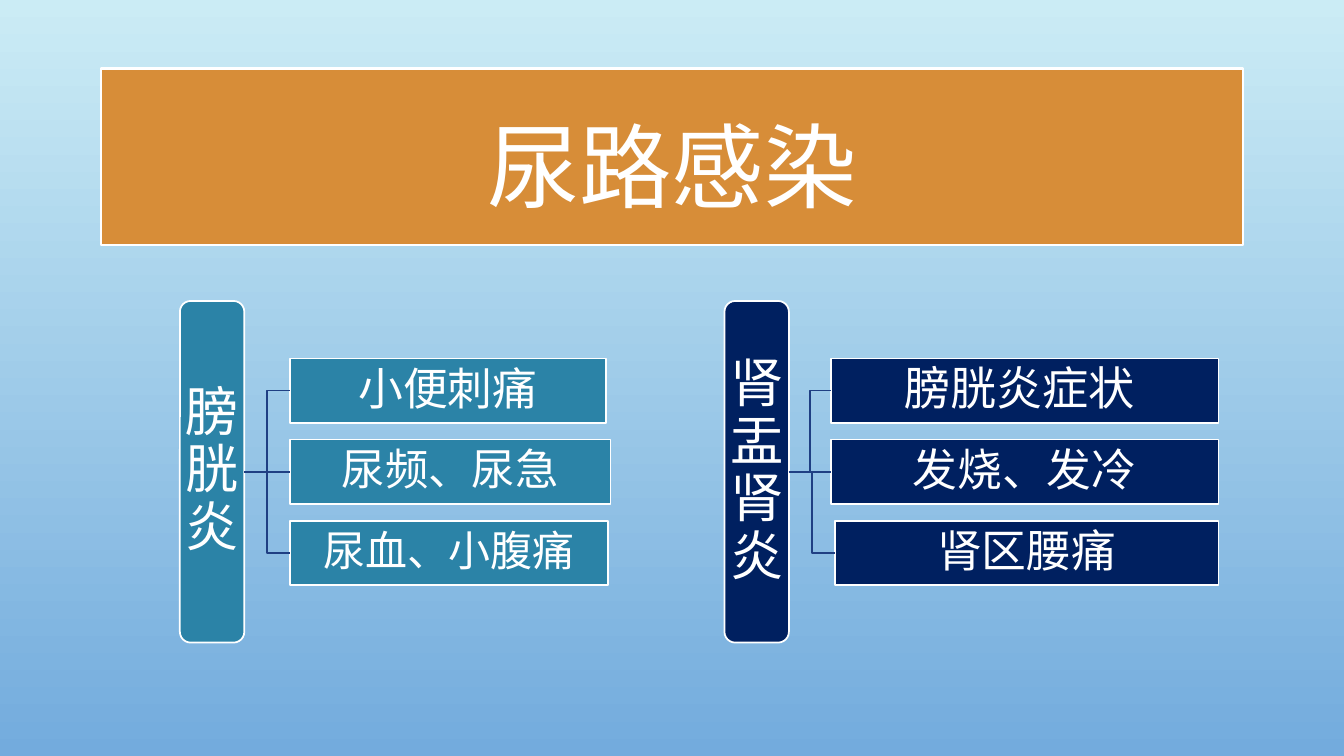
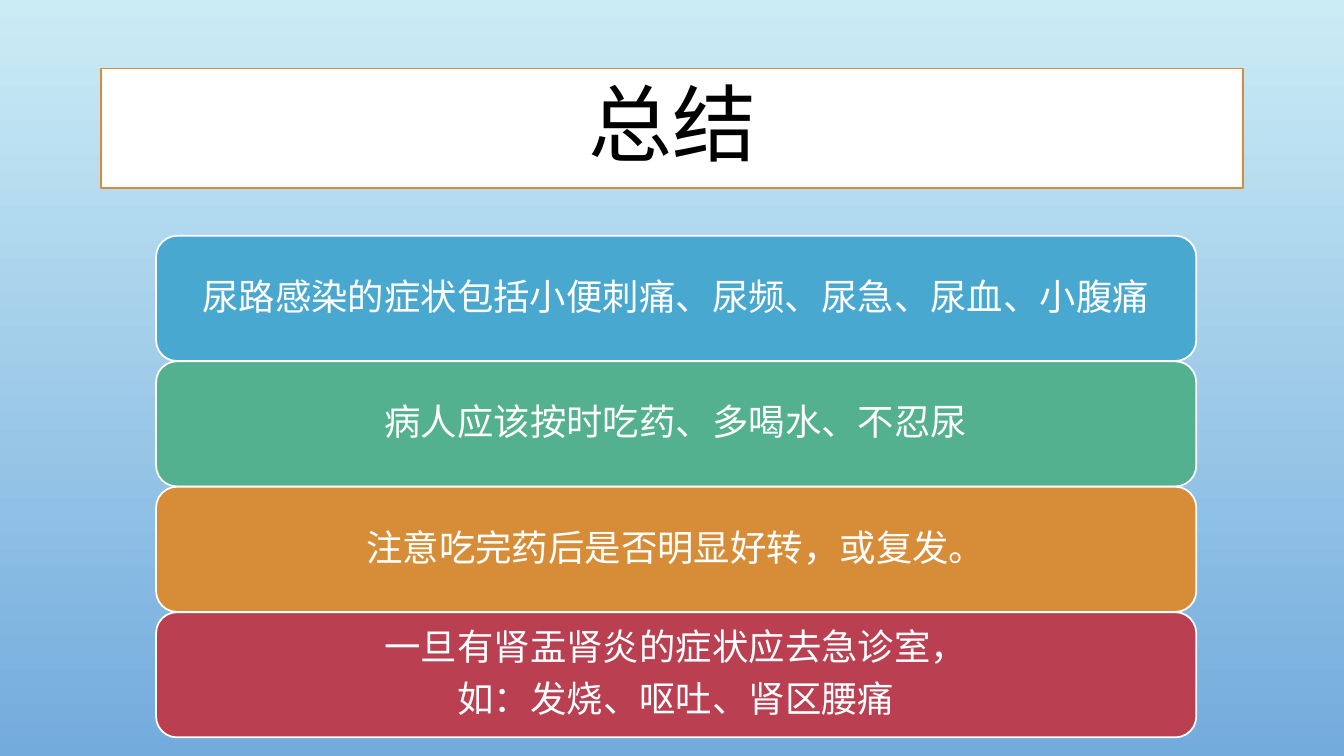
from dataclasses import dataclass

from lxml import etree
from pptx import Presentation
from pptx.dml.color import RGBColor
from pptx.enum import shapes as kinds, text as txt
from pptx.oxml.ns import qn
from pptx.util import Pt


# Colours, font and type sizes
@dataclass(frozen=True)
class Theme:
    sky: str = "CBECF5"
    blue: str = "73ABDD"
    white: str = "FFFFFF"
    black: str = "000000"
    orange: str = "D78D38"
    teal: str = "2B83A7"
    navy: str = "002060"
    wire: str = "1F3F83"
    azure: str = "48A8D0"
    green: str = "53B18F"
    red: str = "BA3F51"
    font: str = "Calibri"
    head: int = 66
    sub: int = 60
    stem: int = 38
    body: int = 26
    edge: float = 1.25


T = Theme()
RECT = kinds.MSO_SHAPE.RECTANGLE
ROUND = kinds.MSO_SHAPE.ROUNDED_RECTANGLE
MID = 337  # centre line of both trees


def rgb(code):
    return RGBColor.from_string(code)


def page(deck):
    """Blank slide with the shared gradient."""
    slide = deck.slides.add_slide(deck.slide_layouts[6])
    fill = slide.background.fill
    fill.gradient()
    fill.gradient_angle = 270
    for stop, code in zip(fill.gradient_stops, (T.sky, T.blue)):
        stop.color.rgb = rgb(code)
    return slide


def panel(slide, kind, area, fill, lines, size, ink=T.white, edge=T.white,
          width=T.edge, pad=2, drop=0):
    """Filled shape with centred text; drop lowers the text."""
    shape = slide.shapes.add_shape(kind, *map(Pt, area))
    shape.shadow.inherit = False
    shape.fill.solid()
    shape.fill.fore_color.rgb = rgb(fill)
    shape.line.color.rgb = rgb(edge)
    shape.line.width = Pt(width)
    frame = shape.text_frame
    frame.word_wrap = True
    frame.vertical_anchor = txt.MSO_ANCHOR.MIDDLE
    frame.margin_left = frame.margin_right = frame.margin_bottom = Pt(pad)
    frame.margin_top = Pt(pad + drop)
    for i, line in enumerate(lines):
        para = frame.paragraphs[0] if i == 0 else frame.add_paragraph()
        para.alignment = txt.PP_ALIGN.CENTER
        para.line_spacing = 0.9
        if i:
            para.space_before = Pt(0.35 * size)
        run = para.add_run()
        run.text = line
        run.font.name = T.font
        run.font.size = Pt(size)
        run.font.color.rgb = rgb(ink)
    return shape


def title(slide, words, size, high, **style):
    panel(slide, RECT, (72, 49, 816, high), lines=[words], size=size, **style)


def link(slide, stem, leaf, kind):
    """Line from the right of the stem to the left of the leaf."""
    line = slide.shapes.add_connector(kind, 0, 0, 0, 0)
    line.begin_connect(stem, 3)
    line.end_connect(leaf, 1)
    line.line.color.rgb = rgb(T.wire)
    line.line.width = Pt(T.edge)
    etree.SubElement(line._element.spPr, qn("a:effectLst"))


def tree(slide, left, name, fill, leaves):
    """Upright stem joined to a column of leaves."""
    wide, tall, step = 46, 244, 58
    stem = panel(slide, ROUND, (left, MID - tall / 2, wide, tall), fill,
                 [name], T.stem)
    for i, (words, size, x, span) in enumerate(leaves):
        row = i - (len(leaves) - 1) / 2
        area = (x, MID + row * step - wide / 2, span, wide)
        leaf = panel(slide, RECT, area, fill, [words], size)
        bend = kinds.MSO_CONNECTOR.ELBOW if row else kinds.MSO_CONNECTOR.STRAIGHT
        link(slide, stem, leaf, bend)


def bars(slide, rows):
    """Full-width bars stacked edge to edge."""
    for i, (fill, *lines) in enumerate(rows):
        panel(slide, ROUND, (111.5, 168.5 + i * 89.6, 743, 89.4), fill,
              lines, T.body, pad=8)


def main():
    deck = Presentation()
    deck.slide_width, deck.slide_height = Pt(960), Pt(540)

    # Two kinds of infection
    slide = page(deck)
    title(slide, "尿路感染", T.head, 126, fill=T.orange, width=1.75, drop=21.6)
    tree(slide, 128.5, "膀胱炎", T.teal, [
        ("小便刺痛", 32, 207, 226),
        ("尿频、尿急", 31, 207, 229),
        ("尿血、小腹痛", 30, 207, 227.5)])
    tree(slide, 517.5, "肾盂肾炎", T.navy, [
        ("膀胱炎症状 ", 33, 593.5, 277),
        ("发烧、发冷", 32, 593.5, 277),
        ("肾区腰痛", 32, 596.5, 274)])

    # Summary
    slide = page(deck)
    title(slide, "总结", T.sub, 85.5, fill=T.white, ink=T.black, edge=T.orange)
    bars(slide, [
        (T.azure, "尿路感染的症状包括小便刺痛、尿频、尿急、尿血、小腹痛"),
        (T.green, "病人应该按时吃药、多喝水、不忍尿"),
        (T.orange, "注意吃完药后是否明显好转，或复发。"),
        (T.red, "一旦有肾盂肾炎的症状应去急诊室，", "如：发烧、呕吐、肾区腰痛")])

    deck.save("out.pptx")


if __name__ == "__main__":
    main()
